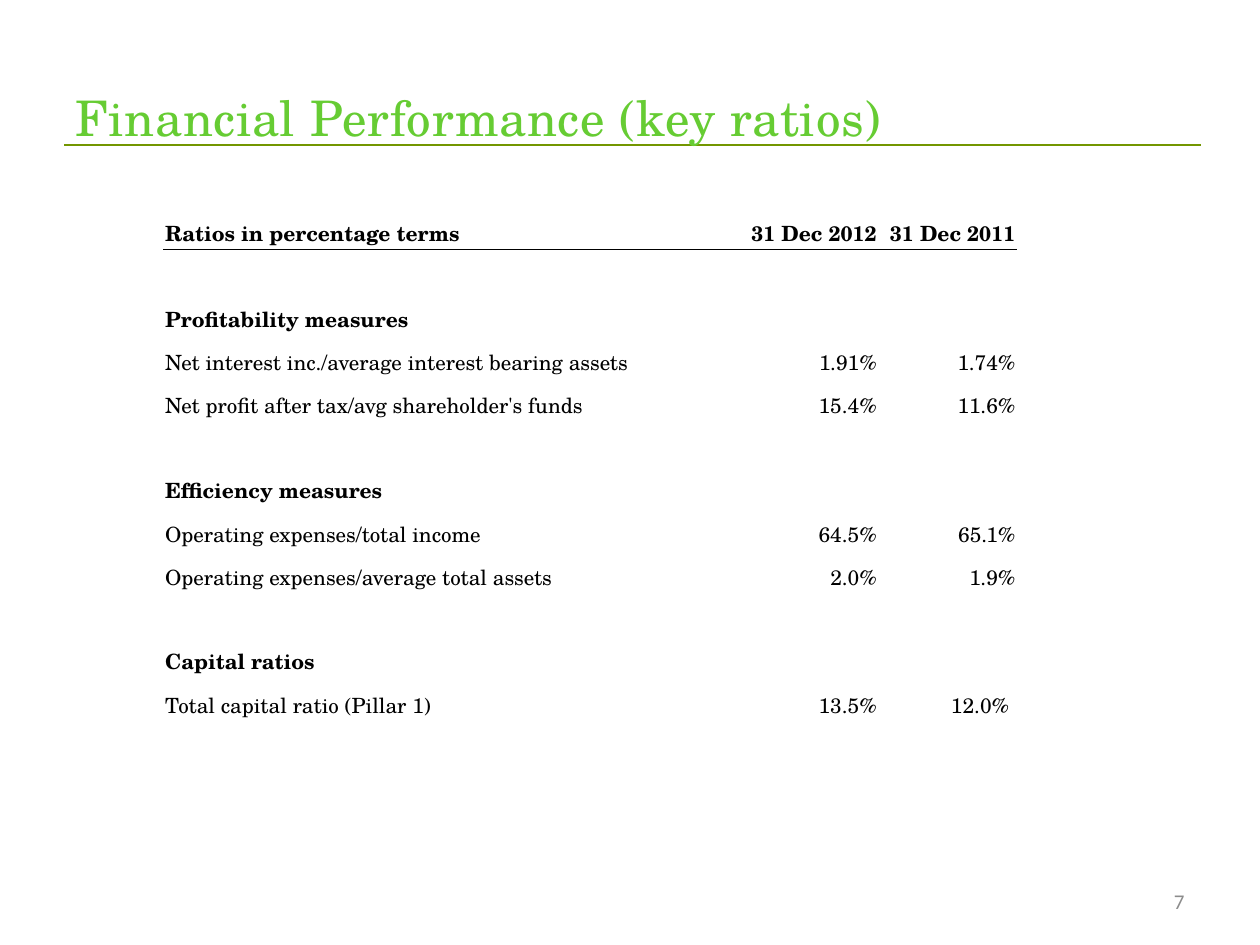
"""Build the key ratios slide with its financial performance table."""
import pptx
import pptx.dml.color
import pptx.enum.shapes
import pptx.enum.text
import pptx.oxml
import pptx.oxml.ns
import pptx.util
from pptx.util import Inches

TITLE_GREEN = pptx.dml.color.RGBColor(0x66, 0xCC, 0x33)
RULE_GREEN = pptx.dml.color.RGBColor(0x73, 0x96, 0x00)
BLACK = pptx.dml.color.RGBColor(0, 0, 0)
GREY = pptx.dml.color.RGBColor(0x8C, 0x8C, 0x8C)
SERIF = "TeX Gyre Schola"
ALIGN = pptx.enum.text.PP_ALIGN
ANCHOR = pptx.enum.text.MSO_ANCHOR

RATIOS = [
    ("Ratios in percentage terms", "31 Dec 2012", "31 Dec 2011"),
    (),
    ("Profitability measures",),
    ("Net interest inc./average interest bearing assets", "1.91%", "1.74%"),
    ("Net profit after tax/avg shareholder's funds", "15.4%", "11.6%"),
    (),
    ("Efficiency measures",),
    ("Operating expenses/total income", "64.5%", "65.1%"),
    ("Operating expenses/average total assets", "2.0%", "1.9%"),
    (),
    ("Capital ratios",),
    ("Total capital ratio (Pillar 1)", "13.5%", "12.0%"),
    (),
]
COLUMN_WIDTHS = [4.41, 0.24, 1.02, 1.1]
VALUE_COLUMNS = [0, 2, 3]


def add_run(paragraph, text, font_name, size, color, bold=False):
    run = paragraph.add_run()
    run.text = text
    run.font.name = font_name
    run.font.size = pptx.util.Pt(size)
    run.font.color.rgb = color
    run.font.bold = bold
    return run


def add_border(cell, side):
    border = pptx.oxml.parse_xml(
        f'<a:{side} {pptx.oxml.ns.nsdecls("a")} w="6350"><a:solidFill>'
        f'<a:srgbClr val="{BLACK}"/></a:solidFill></a:{side}>'
    )
    cell._tc.get_or_add_tcPr().insert(0, border)


deck = pptx.Presentation()
deck.slide_width, deck.slide_height = Inches(10), Inches(7.5)
slide = deck.slides.add_slide(deck.slide_layouts[6])

title_rule = slide.shapes.add_connector(
    pptx.enum.shapes.MSO_CONNECTOR.STRAIGHT,
    Inches(0.51), Inches(1.15), Inches(9.53), Inches(1.15),
)
title_rule.line.color.rgb = RULE_GREEN
title_rule.line.width = pptx.util.Pt(0.75)
title_rule._element.spPr.append(pptx.oxml.parse_xml(f'<a:effectLst {pptx.oxml.ns.nsdecls("a")}/>'))

title = slide.shapes.add_textbox(Inches(0.5), Inches(0.3), Inches(9), Inches(1.25)).text_frame
title.word_wrap = True
title.vertical_anchor = ANCHOR.MIDDLE
heading = add_run(title.paragraphs[0], "Financial Performance (key ratios)", SERIF, 28, TITLE_GREEN)
heading.font._element.set("spc", "40")

ratio_table = slide.shapes.add_table(
    len(RATIOS), len(COLUMN_WIDTHS), Inches(1.3), Inches(1.47), Inches(6.77), Inches(4.59)
).table
ratio_table.first_row = False
ratio_table.horz_banding = False
for column, width in zip(ratio_table.columns, COLUMN_WIDTHS):
    column.width = Inches(width)

for row_index, ratio in enumerate(RATIOS):
    row = ratio_table.rows[row_index]
    row.height = Inches(0.51 if row_index == 0 else 0.34)
    for cell in row.cells:
        cell.fill.background()
        cell.vertical_anchor = ANCHOR.BOTTOM
        cell.margin_left = cell.margin_right = cell.margin_top = Inches(0.01)
        cell.margin_bottom = 0
        if row_index < 2:
            add_border(cell, "lnB" if row_index == 0 else "lnT")
    is_heading = row_index == 0 or len(ratio) == 1
    for column_index, text in zip(VALUE_COLUMNS, ratio):
        cell = row.cells[column_index]
        paragraph = cell.text_frame.paragraphs[0]
        paragraph.alignment = ALIGN.RIGHT if column_index else ALIGN.LEFT
        add_run(paragraph, text, SERIF, 12, BLACK, is_heading)
        if text == "12.0%":
            cell.margin_right = Inches(0.06)

page_number = slide.shapes.add_textbox(
    Inches(7.17), Inches(6.95), Inches(2.33), Inches(0.4)
).text_frame
page_number.word_wrap = True
page_number.vertical_anchor = ANCHOR.MIDDLE
page_number.paragraphs[0].alignment = ALIGN.RIGHT
add_run(page_number.paragraphs[0], "7", "Calibri", 12, GREY)

deck.save("out.pptx")
